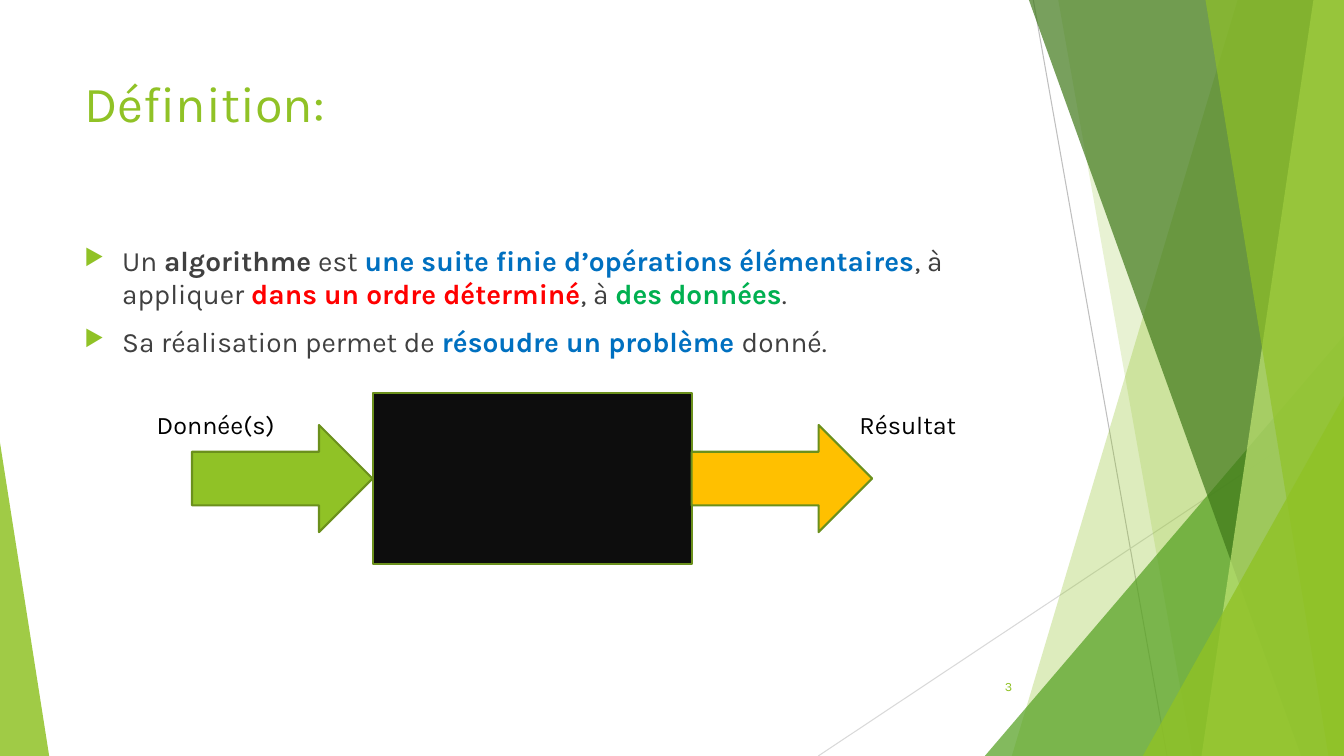
from lxml.etree import SubElement
from pptx import Presentation
from pptx.dml.color import RGBColor
from pptx.enum.shapes import MSO_CONNECTOR as CONN, MSO_SHAPE as SHAPE
from pptx.enum.text import MSO_ANCHOR as ANCHOR, PP_ALIGN as ALIGN
from pptx.oxml.ns import qn
from pptx.util import Cm, Pt

WIDTH, HEIGHT = 33.87, 19.05
COLORS = {
    "lime": "90C226", "pale": "C0E474", "green": "54A021", "forest": "3F7819",
    "outline": "6B901C", "grey": "BFBFBF", "light_grey": "D9D9D9",
    "body": "404040", "blue": "0070C0", "red": "FF0000", "data": "00B050",
    "box": "0D0D0D", "result": "FFC000", "black": "000000",
}


class SlideBuilder:
    """Draws on one slide, with lengths in centimetres."""

    font = "Karla"

    def __init__(self, slide):
        self.shapes = slide.shapes

    def color(self, name):
        return RGBColor.from_string(COLORS[name])

    def paint(self, s, fill, alpha=100, line=None):
        s.shadow.inherit = False
        s.fill.solid()
        s.fill.fore_color.rgb = self.color(fill)
        if alpha < 100:
            clr = s._element.spPr.find(qn("a:solidFill"))[0]
            SubElement(clr, qn("a:alpha"), val=str(alpha * 1000))
        if line:
            s.line.color.rgb = self.color(line)
            s.line.width = Pt(1.5)
        else:
            s.line.fill.background()

    def line(self, x1, y1, x2, y2, color):
        c = self.shapes.add_connector(CONN.STRAIGHT, Cm(x1), Cm(y1), Cm(x2), Cm(y2))
        c.line.color.rgb = self.color(color)
        c.line.width = Pt(0.75)
        SubElement(c._element.spPr, qn("a:effectLst"))

    def band(self, top_x, bottom_x, fill, alpha):
        """Full-height band from a slanted left edge to the slide's right edge."""
        builder = self.shapes.build_freeform(Cm(top_x), 0)
        builder.add_line_segments([
            (Cm(WIDTH), 0), (Cm(WIDTH), Cm(HEIGHT)), (Cm(bottom_x), Cm(HEIGHT))])
        self.paint(builder.convert_to_shape(), fill, alpha)

    def corner(self, x, y, w, apex, fill, alpha):
        """Right triangle standing on the slide's bottom edge."""
        s = self.shapes.add_shape(
            SHAPE.ISOSCELES_TRIANGLE, Cm(x), Cm(y), Cm(w), Cm(HEIGHT - y))
        s.adjustments[0] = apex
        self.paint(s, fill, alpha)

    def block(self, kind, x, y, w, h, fill):
        s = self.shapes.add_shape(kind, Cm(x), Cm(y), Cm(w), Cm(h))
        self.paint(s, fill, line="outline")

    def text(self, x, y, w, h, paragraphs, size, align=ALIGN.LEFT,
             anchor=ANCHOR.TOP, bullet=False):
        """Each paragraph is a list of (text, colour, bold) runs."""
        tf = self.shapes.add_textbox(Cm(x), Cm(y), Cm(w), Cm(h)).text_frame
        tf.word_wrap = True
        tf.vertical_anchor = anchor
        for i, runs in enumerate(paragraphs):
            p = tf.add_paragraph() if i else tf.paragraphs[0]
            p.alignment = align
            if bullet:
                self.bullet(p)
            for text, color, bold in runs:
                r = p.add_run()
                r.text = text
                r.font.name = self.font
                r.font.size = Pt(size)
                r.font.bold = bold
                r.font.color.rgb = self.color(color)

    def bullet(self, p):
        p.space_before = Pt(10)
        pPr = p._p.get_or_add_pPr()
        pPr.set("marL", str(Cm(0.95)))
        pPr.set("indent", str(-Cm(0.95)))
        clr = SubElement(pPr, qn("a:buClr"))
        SubElement(clr, qn("a:srgbClr"), val=COLORS["lime"])
        SubElement(pPr, qn("a:buSzPct"), val="80000")
        SubElement(pPr, qn("a:buChar"), char="▶")


def draw_background(b):
    b.line(26.04, 0, 29.41, HEIGHT, "grey")
    b.line(WIDTH, 10.24, 20.62, HEIGHT, "light_grey")
    b.band(31.19, 25.5, "lime", 30)
    b.band(26.67, 30.05, "lime", 20)
    b.corner(24.82, 8.46, 9.05, 1, "green", 72)
    b.band(25.93, 32.79, "forest", 70)
    b.band(33.1, 30.28, "pale", 70)
    b.band(30.38, 33.48, "lime", 65)
    b.corner(28.8, 9.98, 5.07, 1, "lime", 80)
    b.corner(0, 11.15, 1.24, 0, "lime", 85)


def draw_definition(b):
    b.text(1.88, 1.7, 23.88, 3.66, [[("Définition:", "lime", False)]], 36)
    b.text(1.88, 6, 23.88, 10.77, [
        [("Un ", "body", False), ("algorithme", "body", True),
         (" est ", "body", False),
         ("une suite finie d’opérations élémentaires", "blue", True),
         (", à appliquer ", "body", False),
         ("dans un ordre déterminé", "red", True), (", à ", "body", False),
         ("des données", "data", True), (".", "body", False)],
        [("Sa réalisation permet de ", "body", False),
         ("résoudre un problème ", "blue", True), ("donné.", "body", False)],
    ], 20, bullet=True)
    b.text(23.85, 16.79, 1.91, 1.02, [[("3", "lime", False)]], 9,
           align=ALIGN.RIGHT, anchor=ANCHOR.MIDDLE)


def draw_process(b):
    box_x, box_w, arrow_w = 9.39, 8.04, 4.55
    b.block(SHAPE.RECTANGLE, box_x, 9.9, box_w, 4.32, "box")
    for x, fill in ((box_x - arrow_w, "lime"), (box_x + box_w, "result")):
        b.block(SHAPE.RIGHT_ARROW, x, 10.71, arrow_w, 2.7, fill)
    for x, label in ((3.7, "Donnée(s)"), (21.41, "Résultat")):
        b.text(x, 10.19, 5.7, 1.02, [[(label, "black", False)]], 18)


def main():
    prs = Presentation()
    prs.slide_width, prs.slide_height = Cm(WIDTH), Cm(HEIGHT)
    b = SlideBuilder(prs.slides.add_slide(prs.slide_layouts[6]))
    draw_background(b)
    draw_definition(b)
    draw_process(b)
    prs.save("out.pptx")


if __name__ == "__main__":
    main()
